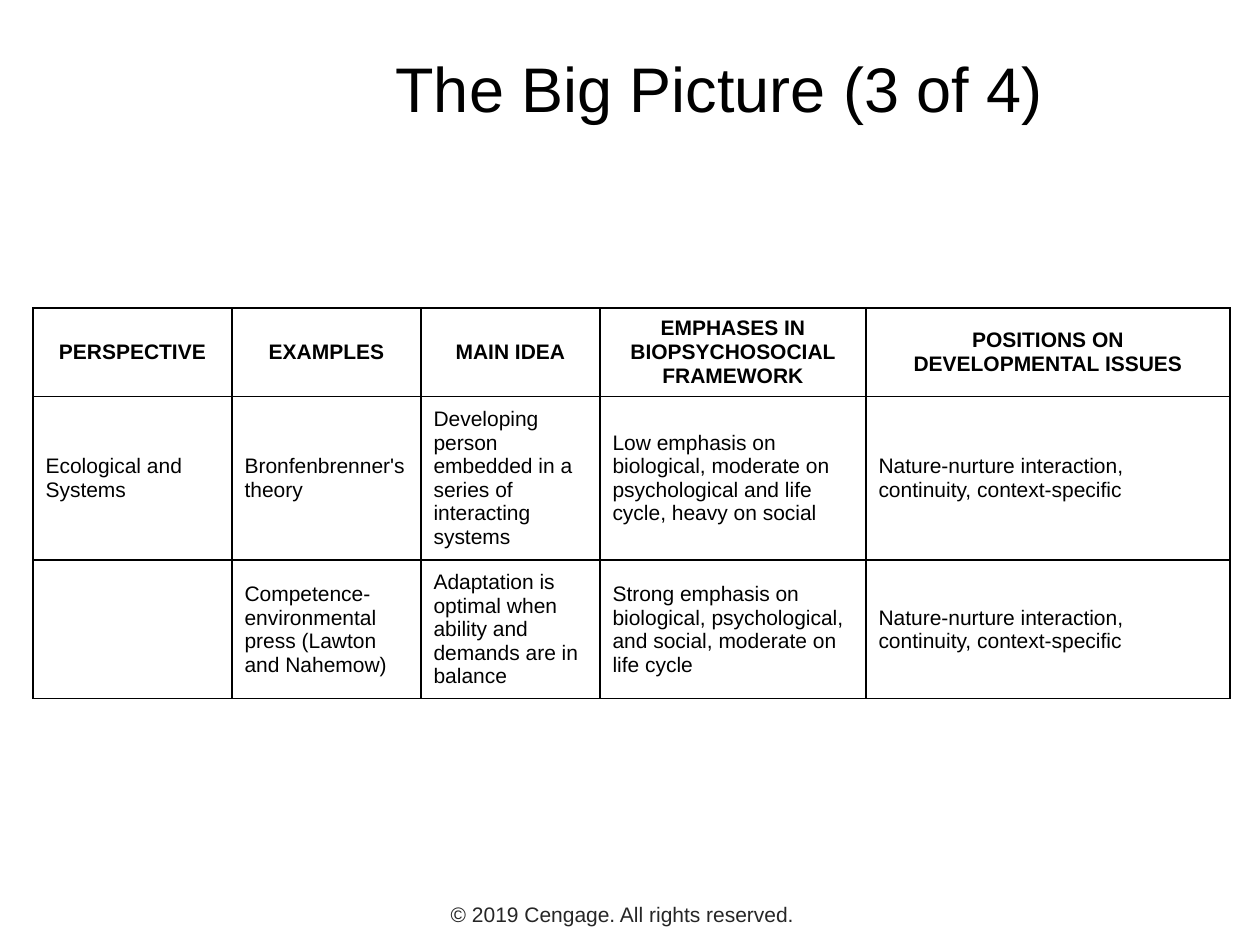
import lxml.etree
import pptx
import pptx.dml.color
import pptx.enum.text
import pptx.oxml.ns
import pptx.util

PIXELS_PER_INCH = 126
FONT = "Arial"
COLORS = {"paper": "FFFFFF", "ink": "000000", "footer": "262626"}
CENTER = pptx.enum.text.PP_ALIGN.CENTER
LEFT = pptx.enum.text.PP_ALIGN.LEFT
MIDDLE = pptx.enum.text.MSO_ANCHOR.MIDDLE
TOP = pptx.enum.text.MSO_ANCHOR.TOP

COLUMN_WIDTHS = [199, 189, 179, 266, 364]
ROW_HEIGHTS = [84, 154, 130]
POSITION = "Nature-nurture interaction, continuity, context-specific"
ROWS = [
    ["PERSPECTIVE", "EXAMPLES", "MAIN IDEA",
     "EMPHASES IN BIOPSYCHOSOCIAL FRAMEWORK", "POSITIONS ON DEVELOPMENTAL ISSUES"],
    ["Ecological and Systems", "Bronfenbrenner's theory",
     "Developing person embedded in a series of interacting systems",
     "Low emphasis on biological, moderate on psychological and life cycle, heavy on social",
     POSITION],
    ["", "Competence- environmental press (Lawton and Nahemow)",
     "Adaptation is optimal when ability and demands are in balance",
     "Strong emphasis on biological, psychological, and social, moderate on life cycle",
     POSITION],
]


def px(length):
    return pptx.util.Emu(round(length * 914400 / PIXELS_PER_INCH))


def rgb(name):
    return pptx.dml.color.RGBColor.from_string(COLORS[name])


def write_text(text_frame, text, size, color="ink", alignment=CENTER, bold=False):
    text_frame.text = text
    paragraph = text_frame.paragraphs[0]
    paragraph.alignment = alignment
    for run in paragraph.runs:
        run.font.name = FONT
        run.font.size = pptx.util.Pt(size)
        run.font.bold = bold
        run.font.color.rgb = rgb(color)


def add_text_box(slide, box, text, size, color="ink", anchor=TOP):
    text_frame = slide.shapes.add_textbox(*map(px, box)).text_frame
    text_frame.word_wrap = True
    text_frame.vertical_anchor = anchor
    write_text(text_frame, text, size, color)


def add_cell_borders(cell):
    properties = cell._tc.get_or_add_tcPr()
    for index, side in enumerate(("a:lnL", "a:lnR", "a:lnT", "a:lnB")):
        line = lxml.etree.Element(pptx.oxml.ns.qn(side), w=str(pptx.util.Pt(1)))
        fill = lxml.etree.SubElement(line, pptx.oxml.ns.qn("a:solidFill"))
        lxml.etree.SubElement(fill, pptx.oxml.ns.qn("a:srgbClr"), val=COLORS["ink"])
        properties.insert(index, line)


def add_perspectives_table(slide, box):
    table = slide.shapes.add_table(len(ROWS), len(COLUMN_WIDTHS), *map(px, box)).table
    table.horz_banding = False
    for column, width in zip(table.columns, COLUMN_WIDTHS):
        column.width = px(width)
    for row_index, (row, height, texts) in enumerate(zip(table.rows, ROW_HEIGHTS, ROWS)):
        row.height = px(height)
        is_header = row_index == 0
        for cell, text in zip(row.cells, texts):
            cell.fill.solid()
            cell.fill.fore_color.rgb = rgb("paper")
            cell.vertical_anchor = MIDDLE
            write_text(cell.text_frame, text, 12,
                       alignment=CENTER if is_header else LEFT, bold=is_header)
            add_cell_borders(cell)


def main():
    presentation = pptx.Presentation()
    presentation.slide_width = px(1260)
    presentation.slide_height = px(945)
    slide = presentation.slides.add_slide(presentation.slide_layouts[6])
    slide.background.fill.solid()
    slide.background.fill.fore_color.rgb = rgb("paper")
    add_text_box(slide, (175, 895, 895, 38), "© 2019 Cengage. All rights reserved.", 12, "footer")
    add_text_box(slide, (242, 32, 955, 110), "The Big Picture (3 of 4)", 36, anchor=MIDDLE)
    add_perspectives_table(slide, (33, 308, sum(COLUMN_WIDTHS), sum(ROW_HEIGHTS)))
    presentation.save("out.pptx")


if __name__ == "__main__":
    main()
